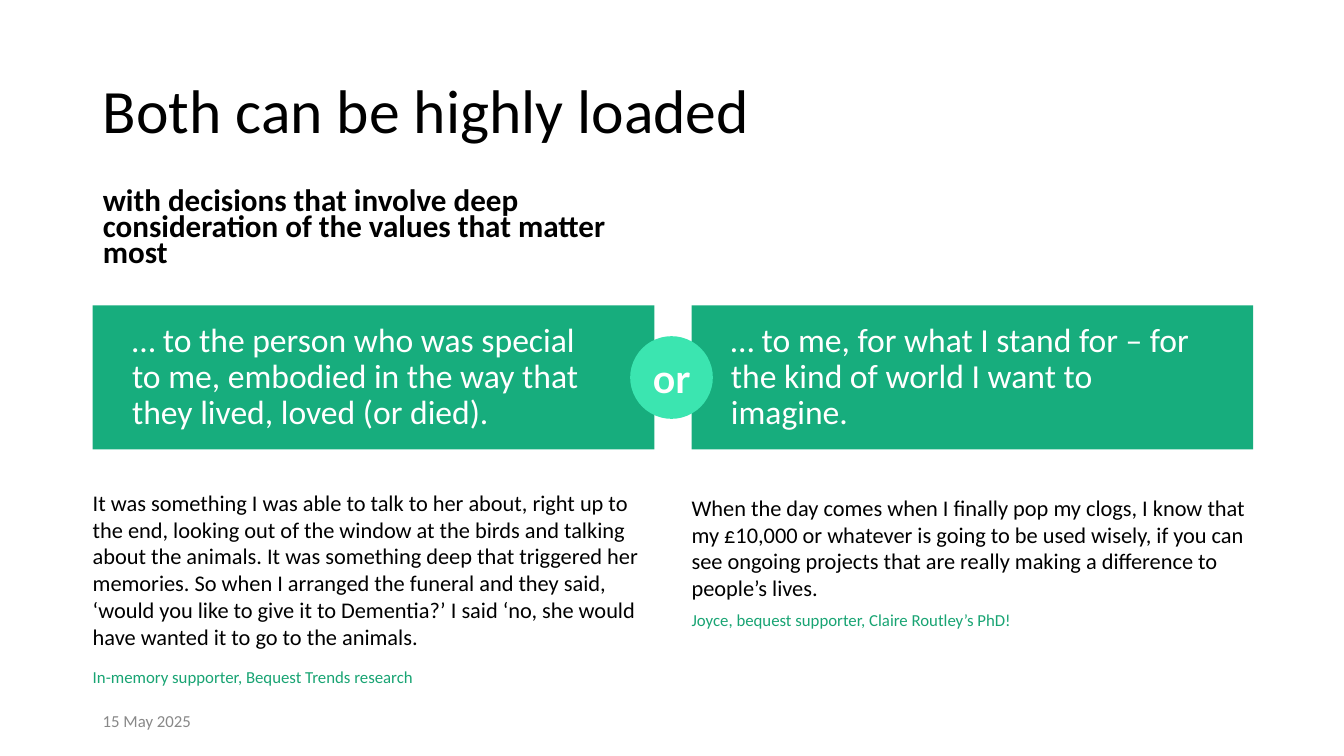
import pptx
import pptx.dml.color
import pptx.enum.shapes
import pptx.enum.text
import pptx.oxml.ns
import pptx.util
from lxml import etree

Inches, Pt = pptx.util.Inches, pptx.util.Pt
RGB = pptx.dml.color.RGBColor.from_string
ANCHOR, ALIGN = pptx.enum.text.MSO_ANCHOR, pptx.enum.text.PP_ALIGN
SHAPE = pptx.enum.shapes.MSO_SHAPE

COLORS = {"black": "000000", "white": "FFFFFF", "grey": "888888",
          "panel": "17AD7D", "badge": "3BE5B0", "source": "18A473"}
LEFT, COL_W, PITCH = 0.92, 5.57, 5.94
PANEL_TOP, PANEL_H, BADGE = 3.03, 1.43, 0.82

COLUMNS = [
    {"claim": "… to the person who was special to me, embodied in the way that "
              "they lived, loved (or died).",
     "quote": "It was something I was able to talk to her about, right up to the end, "
              "looking out of the window at the birds and talking about the animals. "
              "It was something deep that triggered her memories. So when I arranged "
              "the funeral and they said, ‘would you like to give it to Dementia?’ "
              "I said ‘no, she would have wanted it to go to the animals.",
     "source": "In-memory supporter, Bequest Trends research",
     "top": 4.85, "height": 1.99, "gap": 12},
    {"claim": "… to me, for what I stand for – for the kind of world I want to imagine.",
     "quote": "When the day comes when I finally pop my clogs, I know that my £10,000 or "
              "whatever is going to be used wisely, if you can see ongoing projects that "
              "are really making a difference to people’s lives.",
     "source": "Joyce, bequest supporter, Claire Routley’s PhD!",
     "top": 4.9, "height": 1.36, "gap": 6},
]


def set_frame(sp, margins=(0.1, 0.05, 0.1, 0.05), anchor=ANCHOR.MIDDLE):
    """Set wrapping, margins and anchor, and return the text frame."""
    tf = sp.text_frame
    tf.word_wrap = True
    tf.auto_size = pptx.enum.text.MSO_AUTO_SIZE.NONE
    tf.vertical_anchor = anchor
    tf.margin_left, tf.margin_top, tf.margin_right, tf.margin_bottom = map(Inches, margins)
    return tf


def write(p, text, size, color, font="Calibri", bold=False, spacing=1.0,
          before=0, align=ALIGN.LEFT):
    p.alignment, p.line_spacing, p.space_before = align, spacing, Pt(before)
    r = p.add_run()
    r.text = text
    r.font.name, r.font.size, r.font.bold = font, Pt(size), bold
    r.font.color.rgb = RGB(COLORS[color])


prs = pptx.Presentation()
prs.slide_width, prs.slide_height = Inches(13.33), Inches(7.5)
s = prs.slides.add_slide(prs.slide_layouts[1])

# Title, subtitle and date
title, body = s.shapes.title, s.placeholders[1]
title.left, title.top, title.width, title.height = map(Inches, (LEFT, 0.4, 11.5, 1.45))
write(set_frame(title).paragraphs[0], "Both can be highly loaded", 44, "black", spacing=0.9)

body.left, body.top, body.width, body.height = map(Inches, (LEFT, 1.84, 5.64, 0.9))
p = set_frame(body, anchor=ANCHOR.TOP).paragraphs[0]
pPr = p._p.get_or_add_pPr()
pPr.set("marL", "0")
pPr.set("indent", "0")
etree.SubElement(pPr, pptx.oxml.ns.qn("a:buNone"))
write(p, "with decisions that involve deep consideration of the values that matter most",
      22.2, "black", bold=True, spacing=0.7)

date = s.shapes.add_textbox(*map(Inches, (LEFT, 6.95, 3, 0.4)))
write(set_frame(date).paragraphs[0], "15 May 2025", 12, "grey")

# Claim panels with their quotes, then the badge between them
shapes = [(SHAPE.RECTANGLE, (LEFT + i * PITCH, PANEL_TOP, COL_W, PANEL_H), "panel",
           (0.39, 0.05, 0.51, 0.05),
           dict(text=col["claim"], size=24, color="white", spacing=0.9))
          for i, col in enumerate(COLUMNS)]
shapes.append((SHAPE.OVAL, (6.25, PANEL_TOP + (PANEL_H - BADGE) / 2, BADGE, BADGE), "badge",
               (0, 0, 0, 0),
               dict(text="or", size=28, color="white", font="Lato", bold=True,
                    align=ALIGN.CENTER)))
for kind, box, fill, margins, content in shapes:
    sp = s.shapes.add_shape(kind, *map(Inches, box))
    sp.shadow.inherit = False
    sp.fill.solid()
    sp.fill.fore_color.rgb = RGB(COLORS[fill])
    sp.line.fill.background()
    write(set_frame(sp, margins).paragraphs[0], **content)

for i, col in enumerate(COLUMNS):
    sp = s.shapes.add_textbox(*map(Inches, (LEFT + i * PITCH, col["top"], COL_W, col["height"])))
    tf = set_frame(sp, (0, 0, 0, 0), ANCHOR.TOP)
    write(tf.paragraphs[0], col["quote"], 16, "black")
    write(tf.add_paragraph(), col["source"], 12, "source", before=col["gap"])

prs.save("out.pptx")
